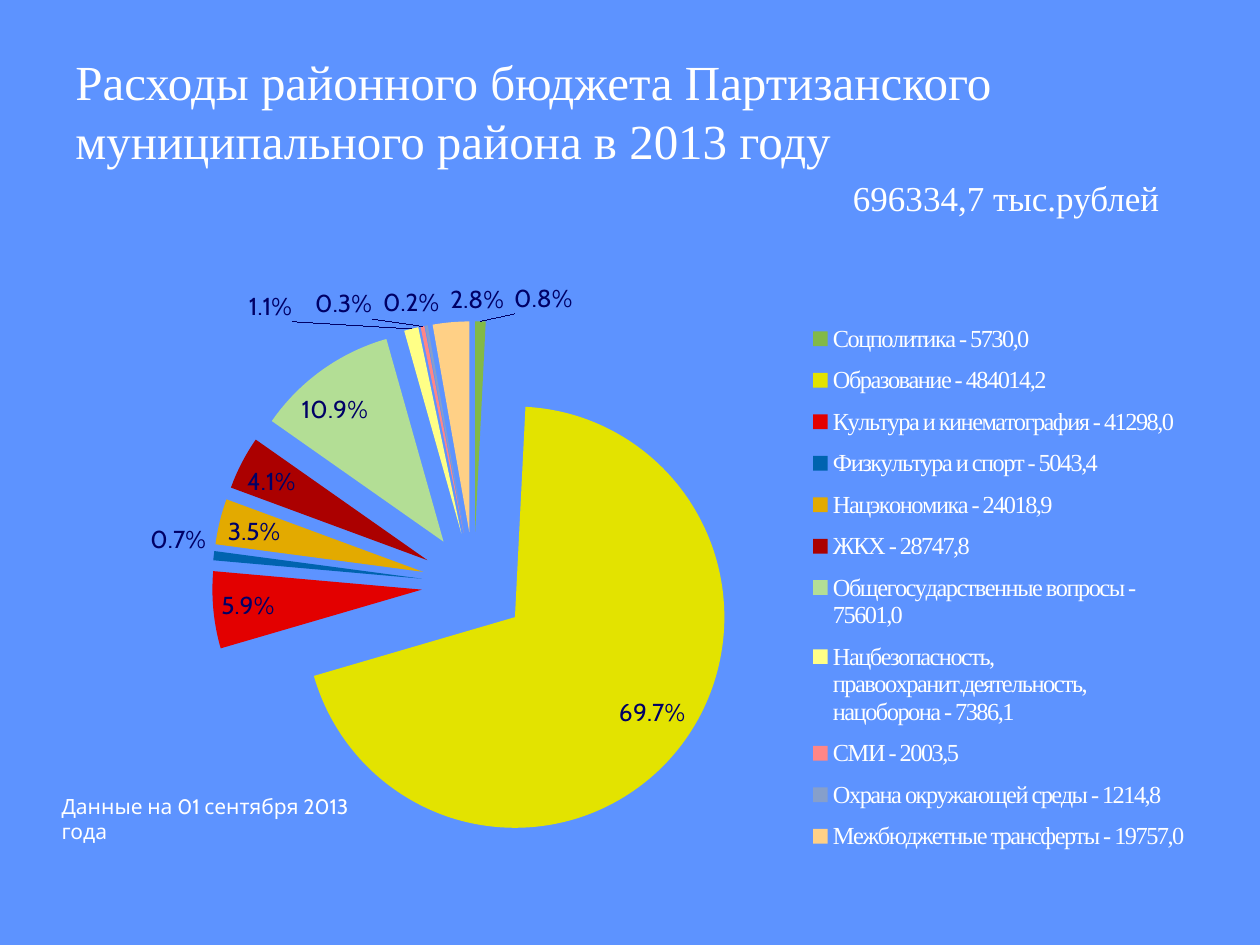
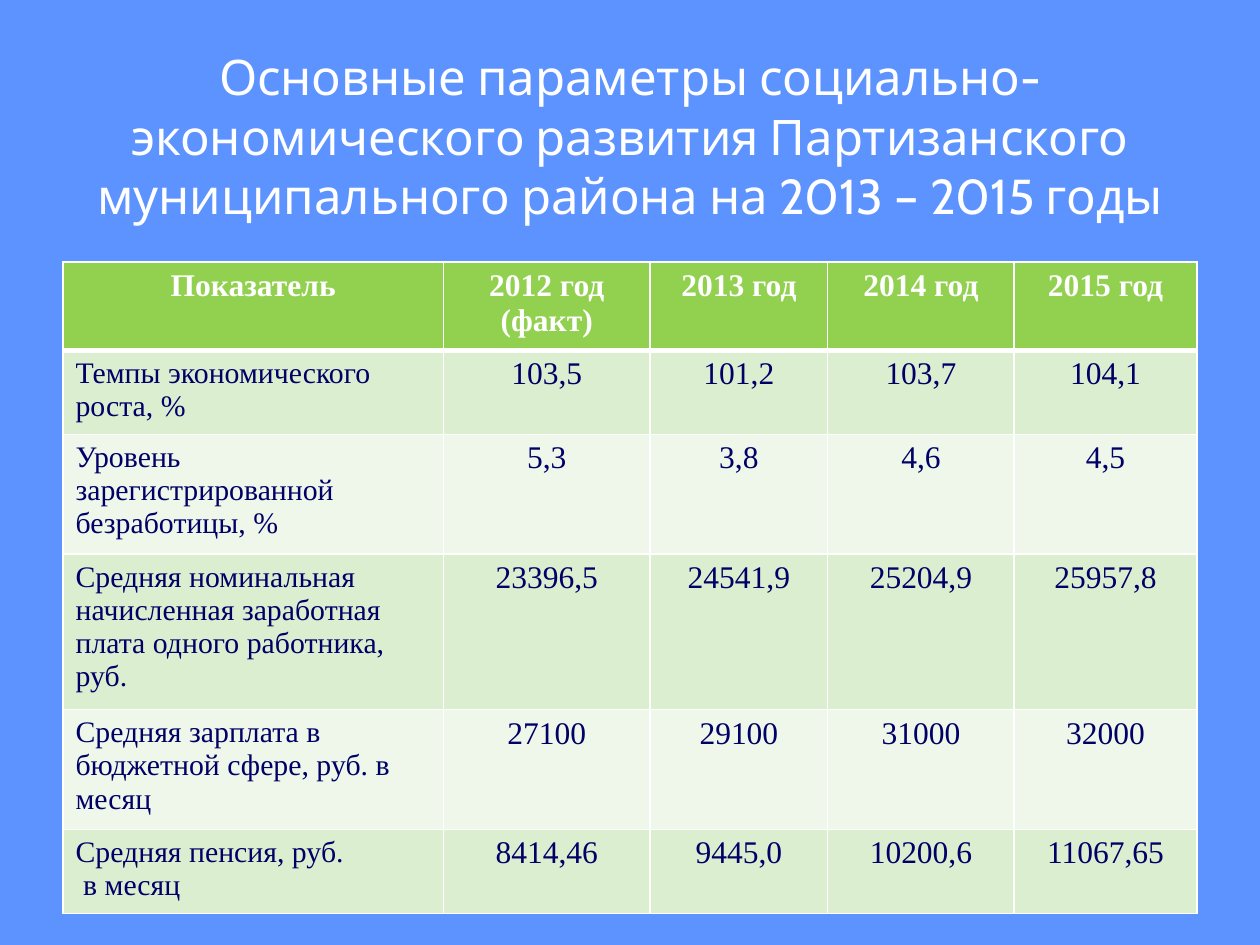
from lxml import etree
from pptx import Presentation
from pptx.chart.data import CategoryChartData
from pptx.dml.color import RGBColor
from pptx.enum.chart import XL_CHART_TYPE, XL_LABEL_POSITION, XL_LEGEND_POSITION
from pptx.enum.text import MSO_ANCHOR, PP_ALIGN
from pptx.oxml import parse_xml
from pptx.oxml.ns import nsdecls, qn
from pptx.util import Inches, Pt

LEFT, CENTER, RIGHT = PP_ALIGN.LEFT, PP_ALIGN.CENTER, PP_ALIGN.RIGHT
TOP, MIDDLE = MSO_ANCHOR.TOP, MSO_ANCHOR.MIDDLE
PIE = XL_CHART_TYPE.PIE
LEGEND_RIGHT = XL_LEGEND_POSITION.RIGHT
BEST_FIT = XL_LABEL_POSITION.BEST_FIT

SERIF, SANS = "Times New Roman", "Cabin"
BLUE = RGBColor(0x5D, 0x93, 0xFF)
WHITE = RGBColor(0xFF, 0xFF, 0xFF)
NAVY = RGBColor(0x00, 0x00, 0x66)
HEADER_GREEN = RGBColor(0x92, 0xD0, 0x50)
BANDS = (RGBColor(0xDC, 0xEE, 0xD0), RGBColor(0xEE, 0xF7, 0xE9))

TITLE_BOX = (0.5, 0.32, 9, 1.51)
EXPENSES_TITLE = "Расходы районного бюджета Партизанского муниципального района в 2013 году"
EXPENSES_TOTAL = "696334,7 тыс.рублей"
DATA_DATE = "Данные на 01 сентября 2013 года"
CHART_BOX = (0.62, 2.11, 9.14, 4.77)
PIE_BOX = (1.07, 0.44, 4.18, 4.18)  # inside the chart
LEGEND_BOX = (5.82, 0.36, 3.06, 4.39)
EXPENSES = [  # name, percent, slice colour
    ("Соцполитика - 5730,0", 0.8, "82B947"),
    ("Образование - 484014,2", 69.7, "E3E300"),
    ("Культура и кинематография - 41298,0", 5.9, "E30000"),
    ("Физкультура и спорт - 5043,4", 0.7, "0063AF"),
    ("Нацэкономика - 24018,9", 3.5, "E3AA00"),
    ("ЖКХ - 28747,8", 4.1, "AB0000"),
    ("Общегосударственные вопросы - 75601,0", 10.9, "B3DE95"),
    ("Нацбезопасность, правоохранит.деятельность, нацоборона - 7386,1", 1.1, "FFFF86"),
    ("СМИ - 2003,5", 0.3, "FF8686"),
    ("Охрана окружающей среды - 1214,8", 0.2, "869FCB"),
    ("Межбюджетные трансферты - 19757,0", 2.8, "FFD086"),
]

PARAMETERS_TITLE = ("Основные параметры социально-экономического развития "
                    "Партизанского муниципального района на 2013 – 2015 годы")
COLUMN_WIDTHS = (3.02, 1.64, 1.41, 1.48, 1.45)
MIN_ROW_HEIGHT = 0.41
PARAMETERS = [
    ("Показатель", "2012 год\n(факт)", "2013 год", "2014 год", "2015 год"),
    ("Темпы экономического роста, %", "103,5", "101,2", "103,7", "104,1"),
    ("Уровень зарегистрированной безработицы, %", "5,3", "3,8", "4,6", "4,5"),
    ("Средняя номинальная начисленная заработная плата одного работника, руб.",
     "23396,5", "24541,9", "25204,9", "25957,8"),
    ("Средняя зарплата в бюджетной сфере, руб. в месяц",
     "27100", "29100", "31000", "32000"),
    ("Средняя пенсия, руб.\nв месяц", "8414,46", "9445,0", "10200,6", "11067,65"),
]


def write(tf, text, size=18, font=SERIF, color=WHITE, bold=False, align=LEFT,
          line=None, later_indent=0):
    """One paragraph per line of text; later_indent moves all but the first."""
    for i, part in enumerate(text.split("\n")):
        p = tf.add_paragraph() if i else tf.paragraphs[0]
        p.alignment = align
        if line:
            p.line_spacing = Pt(line)
        if i and later_indent:
            p._p.get_or_add_pPr().set("marL", str(Inches(later_indent)))
        r = p.add_run()
        r.text = part
        r.font.size, r.font.name, r.font.bold = Pt(size), font, bold
        r.font.color.rgb = color


def add_text(s, box, text, anchor=TOP, **fmt):
    tf = s.shapes.add_textbox(*map(Inches, box)).text_frame
    tf.word_wrap = True
    tf.vertical_anchor = anchor
    write(tf, text, **fmt)


def add_slide(prs):
    s = prs.slides.add_slide(prs.slide_layouts[6])
    s.background.fill.solid()
    s.background.fill.fore_color.rgb = BLUE
    return s


def set_layout(part, before, box, inner=False):
    """Place a chart part by a box in inches, ahead of the given child."""
    for old in part.findall(qn("c:layout")):
        part.remove(old)
    target = '<c:layoutTarget val="inner"/>' if inner else ""
    chart_sizes = CHART_BOX[2:] * 2
    sizes = "".join(f'<c:{tag} val="{v / full}"/>'
                    for tag, v, full in zip("xywh", box, chart_sizes))
    part.find(qn(before)).addprevious(parse_xml(
        f'<c:layout {nsdecls("c")}><c:manualLayout>{target}<c:xMode val="edge"/>'
        f'<c:yMode val="edge"/>{sizes}</c:manualLayout></c:layout>'))


def add_expense_chart(s):
    data = CategoryChartData()
    data.categories = [name for name, _, _ in EXPENSES]
    data.add_series("Series 1", [value for _, value, _ in EXPENSES])
    chart = s.shapes.add_chart(PIE, *map(Inches, CHART_BOX), data).chart
    chart.has_title = False
    chart.font.name, chart.font.size = SANS, Pt(18)
    chart.font.color.rgb = WHITE

    chart.has_legend = True
    legend = chart.legend
    legend.position, legend.include_in_layout = LEGEND_RIGHT, False
    legend.font.name, legend.font.size = SERIF, Pt(14)
    legend.font.color.rgb = WHITE
    legend._element.find(".//" + qn("a:defRPr")).set("spc", "-100")
    set_layout(legend._element, "c:overlay", LEGEND_BOX)

    plot = chart.plots[0]
    plot.vary_by_categories = True
    set_layout(chart._chartSpace.chart.plotArea, "c:pieChart", PIE_BOX, inner=True)
    series = plot.series[0]
    for i, (_, _, color) in enumerate(EXPENSES):
        fill = series.points[i].format.fill
        fill.solid()
        fill.fore_color.rgb = RGBColor.from_string(color)
    explosion = etree.Element(qn("c:explosion"), val="25")
    series._element.find(qn("c:dPt")).addprevious(explosion)

    labels = series.data_labels
    labels.show_percentage, labels.show_value = True, False
    labels.number_format, labels.number_format_is_linked = "0.0%", False
    labels.position = BEST_FIT
    labels.font.name, labels.font.size = SANS, Pt(14)
    labels.font.color.rgb = NAVY


def set_borders(cell, bottom):
    tcPr = cell._tc.get_or_add_tcPr()
    widths = {"lnL": 1, "lnR": 1, "lnT": 1, "lnB": bottom}
    for i, (side, width) in enumerate(widths.items()):
        tcPr.insert(i, parse_xml(
            f'<a:{side} {nsdecls("a")} w="{Pt(width)}"><a:solidFill>'
            f'<a:srgbClr val="{WHITE}"/></a:solidFill></a:{side}>'))


def add_parameter_table(s):
    """Rows start at the minimum height and grow with their text."""
    rows = len(PARAMETERS)
    box = map(Inches, (0.5, 2.08, sum(COLUMN_WIDTHS), rows * MIN_ROW_HEIGHT))
    table = s.shapes.add_table(rows, len(COLUMN_WIDTHS), *box).table
    for column, width in zip(table.columns, COLUMN_WIDTHS):
        column.width = Inches(width)
    for i, row in enumerate(PARAMETERS):
        header = i == 0
        for j, text in enumerate(row):
            cell = table.cell(i, j)
            name = j == 0 and not header
            cell.fill.solid()
            cell.fill.fore_color.rgb = HEADER_GREEN if header else BANDS[(i - 1) % 2]
            set_borders(cell, bottom=3 if header else 1)
            write(cell.text_frame, text, size=17 if name else 18, bold=header,
                  color=WHITE if header else NAVY, align=LEFT if name else CENTER,
                  later_indent=0.06 if name else 0)


def main():
    prs = Presentation()
    prs.slide_width, prs.slide_height = Inches(10), Inches(7.5)

    s = add_slide(prs)
    add_text(s, (0.5, 0.35, 9, 1.05), EXPENSES_TITLE, anchor=MIDDLE, size=28, line=34)
    add_text(s, (5.5, 1.35, 3.8, 0.45), EXPENSES_TOTAL, size=20, align=RIGHT)
    add_expense_chart(s)
    add_text(s, (0.39, 6.25, 2.6, 0.5), DATA_DATE, size=12, font=SANS)

    s = add_slide(prs)
    add_text(s, TITLE_BOX, PARAMETERS_TITLE, anchor=MIDDLE, size=28, font=SANS,
             align=CENTER, line=34)
    add_parameter_table(s)
    prs.save("out.pptx")


if __name__ == "__main__":
    main()
